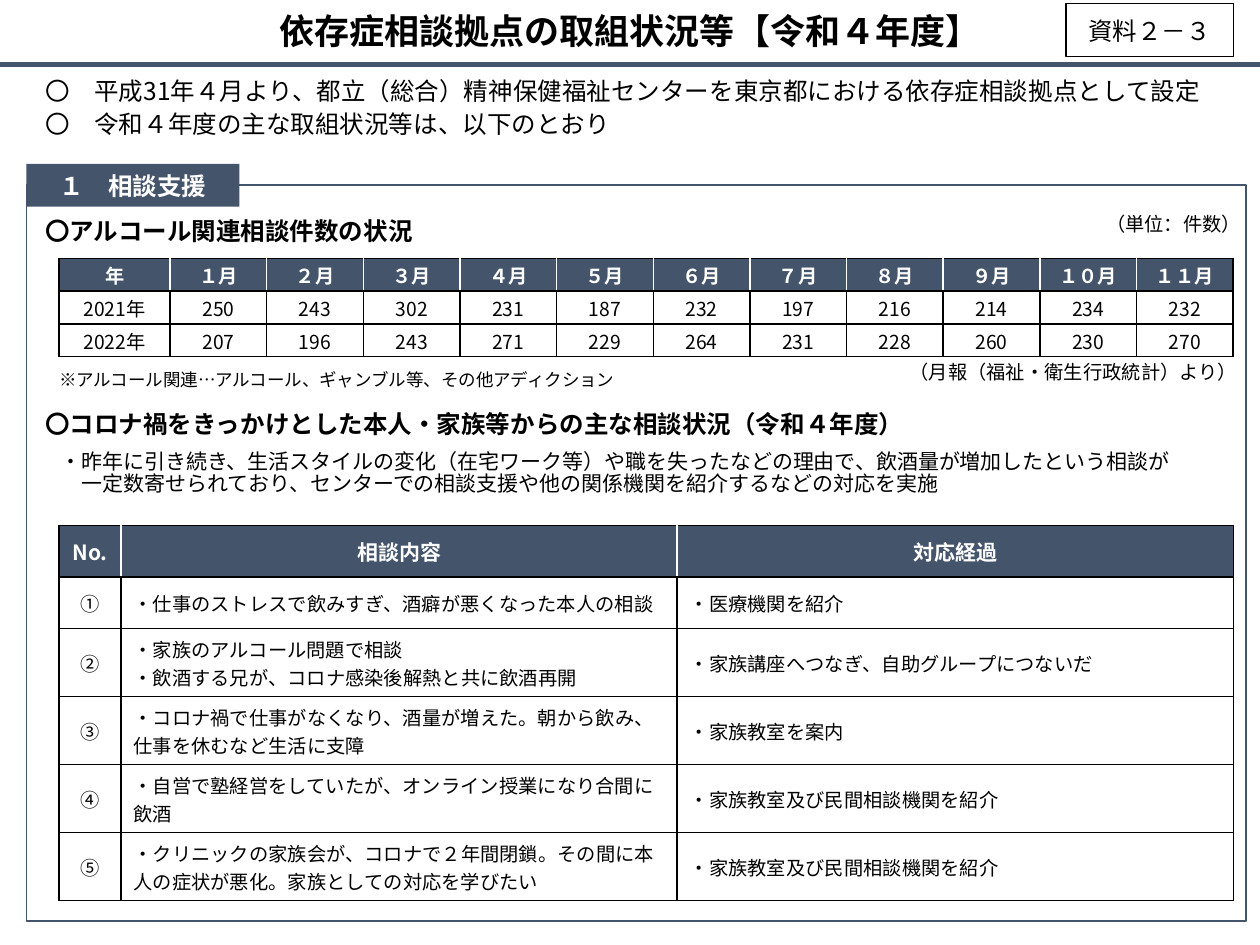
"""Build the slide on the work of addiction consultation centres."""
from lxml import etree
from pptx import Presentation
from pptx.dml.color import RGBColor
from pptx.enum.shapes import MSO_CONNECTOR, MSO_SHAPE
from pptx.enum.text import MSO_ANCHOR, MSO_AUTO_SIZE, PP_ALIGN
from pptx.oxml.ns import qn
from pptx.util import Inches, Pt

LEFT, CENTER = PP_ALIGN.LEFT, PP_ALIGN.CENTER
TOP, MIDDLE = MSO_ANCHOR.TOP, MSO_ANCHOR.MIDDLE
NAVY = RGBColor(0x44, 0x54, 0x6A)
BLACK = RGBColor(0, 0, 0)
WHITE = RGBColor(255, 255, 255)
FONT = "Noto Sans CJK JP"
TIGHT = 0.86

TITLE = "依存症相談拠点の取組状況等【令和４年度】"
INTRO = [
    "〇　平成31年４月より、都立（総合）精神保健福祉センターを東京都における依存症相談拠点として設定",
    "〇　令和４年度の主な取組状況等は、以下のとおり",
]
LABELS = [
    ("〇アルコール関連相談件数の状況", (0.26, 1.7, 4.85, 0.4), {"size": 14, "bold": True}),
    ("〇コロナ禍をきっかけとした本人・家族等からの主な相談状況（令和４年度）",
     (0.26, 3.23, 7.89, 0.4), {"size": 14, "bold": True}),
    ("（単位：件数）", (8.68, 1.66, 1.44, 0.4), {"size": 11}),
    ("※アルコール関連…アルコール、ギャンブル等、その他アディクション",
     (0.37, 2.9, 5.11, 0.32), {"size": 10}),
    ("（月報（福祉・衛生行政統計）より）", (7.12, 2.84, 2.81, 0.25), {"size": 11}),
    ("・昨年に引き続き、生活スタイルの変化（在宅ワーク等）や職を失ったなどの理由で、飲酒量が増加したという相談が\v"
     "一定数寄せられており、センターでの相談支援や他の関係機関を紹介するなどの対応を実施",
     (0.38, 3.54, 9.41, 0.53), {"size": 12, "hanging": 0.17}),
]
COUNTS = [
    ["年", "１月", "２月", "３月", "４月", "５月", "６月", "７月", "８月", "９月", "１０月", "１１月"],
    ["2021年", 250, 243, 302, 231, 187, 232, 197, 216, 214, 234, 232],
    ["2022年", 207, 196, 243, 271, 229, 264, 231, 228, 260, 230, 270],
]
CASES = [
    ["No.", "相談内容", "対応経過"],
    ["①", "・仕事のストレスで飲みすぎ、酒癖が悪くなった本人の相談", "・医療機関を紹介"],
    ["②", "・家族のアルコール問題で相談\n・飲酒する兄が、コロナ感染後解熱と共に飲酒再開",
     "・家族講座へつなぎ、自助グループにつないだ"],
    ["③", "・コロナ禍で仕事がなくなり、酒量が増えた。朝から飲み、仕事を休むなど生活に支障",
     "・家族教室を案内"],
    ["④", "・自営で塾経営をしていたが、オンライン授業になり合間に飲酒",
     "・家族教室及び民間相談機関を紹介"],
    ["⑤", "・クリニックの家族会が、コロナで２年間閉鎖。その間に本人の症状が悪化。家族としての対応を学びたい",
     "・家族教室及び民間相談機関を紹介"],
]
TABLE_LEFT, TABLE_WIDTH = 0.47, 9.32


def write_text(frame, text, size=14, bold=False, color=BLACK, align=LEFT, anchor=TOP,
               spacing=1.0, gap=0, hanging=0):
    frame.word_wrap = True
    frame.vertical_anchor = anchor
    for index, line in enumerate(text.split("\n")):
        para = frame.add_paragraph() if index else frame.paragraphs[0]
        para.text = line
        para.alignment = align
        para.line_spacing = spacing
        para.space_before = Pt(gap if index else 0)
        properties = para._p.get_or_add_pPr()
        properties.set("marL", str(Inches(hanging)))
        properties.set("indent", str(-Inches(hanging)))
        etree.SubElement(properties, qn("a:buNone"))
        for span in para.runs:
            span.font.size = Pt(size)
            span.font.bold = bold
            span.font.color.rgb = color
            span.font.name = FONT
            etree.SubElement(span._r.get_or_add_rPr(), qn("a:ea"), typeface=FONT)


def fill_placeholder(holder, bounds, text, **style):
    holder.left, holder.top, holder.width, holder.height = map(Inches, bounds)
    holder.text_frame.auto_size = MSO_AUTO_SIZE.NONE
    write_text(holder.text_frame, text, **style)


def add_box(page, kind, bounds, fill=None, line=None, width=1):
    box = page.shapes.add_shape(kind, *map(Inches, bounds))
    box.shadow.inherit = False
    for paint, color in ((box.fill, fill), (box.line.fill, line)):
        if color is None:
            paint.background()
        else:
            paint.solid()
            paint.fore_color.rgb = color
    if line is not None:
        box.line.width = Pt(width)
    return box


def set_borders(cell, colors):
    properties = cell._tc.get_or_add_tcPr()
    for side, color in zip("LRTB", colors):
        edge = etree.SubElement(properties, qn(f"a:ln{side}"), w=str(Pt(1)))
        paint = etree.SubElement(edge, qn("a:solidFill"))
        etree.SubElement(paint, qn("a:srgbClr"), val=str(color))


def add_grid(page, rows, top, widths, heights, header_size, left_columns=(), inset=None):
    table = page.shapes.add_table(len(rows), len(widths), Inches(TABLE_LEFT), Inches(top),
                                  Inches(TABLE_WIDTH), Inches(sum(heights))).table
    for column, width in zip(table.columns, widths):
        column.width = Inches(width)
    for row, height in zip(table.rows, heights):
        row.height = Inches(height)
    last = len(widths) - 1
    for r, values in enumerate(rows):
        header = r == 0
        for c, value in enumerate(values):
            cell = table.cell(r, c)
            set_borders(cell, (WHITE if header and c > 0 else BLACK,
                               WHITE if header and c < last else BLACK, BLACK, BLACK))
            if header:
                cell.fill.solid()
                cell.fill.fore_color.rgb = NAVY
            else:
                cell.fill.background()
            if inset is not None:
                cell.margin_left = cell.margin_right = cell.margin_top = Inches(inset)
                cell.margin_bottom = 0
            write_text(cell.text_frame, str(value), size=header_size if header else 11,
                       bold=header, color=WHITE if header else BLACK,
                       align=LEFT if c in left_columns and not header else CENTER)
            cell.vertical_anchor = MIDDLE


def main():
    deck = Presentation()
    deck.slide_width, deck.slide_height = Inches(10), Inches(7.5)
    page = deck.slides.add_slide(deck.slide_layouts[1])
    title, body = page.placeholders

    add_box(page, MSO_SHAPE.RECTANGLE, (0.21, 1.47, 9.68, 5.84), line=NAVY)
    rule = page.shapes.add_connector(MSO_CONNECTOR.STRAIGHT, 0, Inches(0.51),
                                     Inches(10), Inches(0.51))
    rule.line.color.rgb = NAVY
    rule.line.width = Pt(3)
    etree.SubElement(rule._element.spPr, qn("a:effectLst"))

    fill_placeholder(title, (0, 0, 10, 0.48), TITLE, size=20, bold=True,
                     align=CENTER, anchor=MIDDLE)
    fill_placeholder(body, (0.26, 0.59, 9.63, 0.67), "\n".join(INTRO),
                     spacing=TIGHT, gap=4.3)
    for text, bounds, style in LABELS:
        box = page.shapes.add_textbox(*map(Inches, bounds))
        write_text(box.text_frame, text, spacing=TIGHT, **style)

    section = add_box(page, MSO_SHAPE.ROUNDED_RECTANGLE, (0.21, 1.3, 1.69, 0.34), fill=NAVY)
    section.adjustments[0] = 0
    write_text(section.text_frame, "１　相談支援", bold=True, color=WHITE,
               align=CENTER, anchor=MIDDLE)
    reference = add_box(page, MSO_SHAPE.RECTANGLE, (8.46, 0.03, 1.33, 0.42),
                        fill=WHITE, line=BLACK, width=0.75)
    write_text(reference.text_frame, "資料２－３", align=CENTER, anchor=MIDDLE)

    months = len(COUNTS[0]) - 1
    add_grid(page, COUNTS, 2.05, [0.88] + [(TABLE_WIDTH - 0.88) / months] * months,
             [0.26] * 3, 11, inset=0.01)
    add_grid(page, CASES, 4.17, [0.49] + [(TABLE_WIDTH - 0.49) / 2] * 2,
             [0.41] * 2 + [0.54] * 4, 12, left_columns=(1, 2))
    deck.save("out.pptx")


if __name__ == "__main__":
    main()
